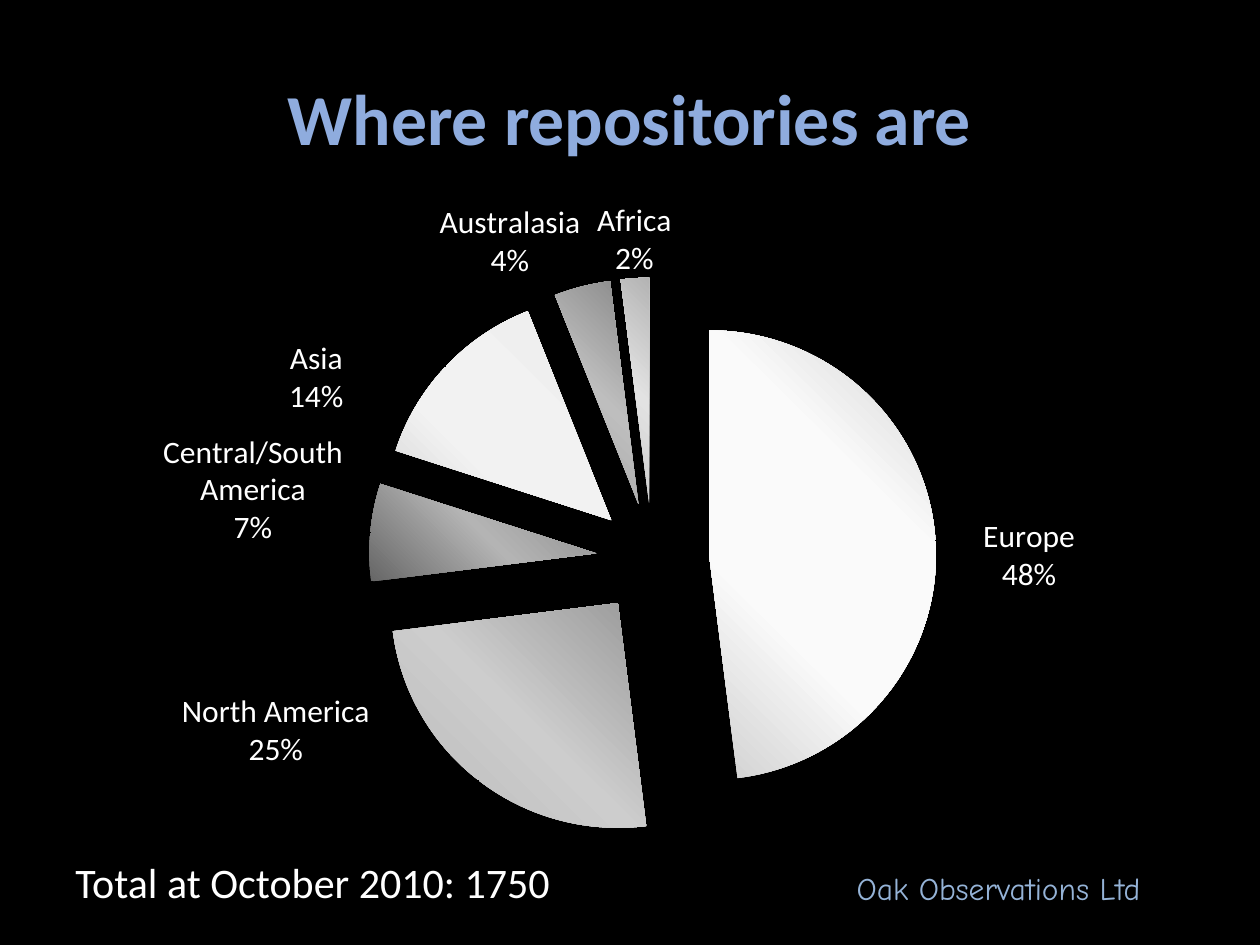
import copy
import pptx
import pptx.util
import pptx.dml.color
import pptx.chart.data
import pptx.enum.chart
import pptx.enum.text
import pptx.oxml
import pptx.oxml.ns
from pptx.util import Inches

CHART_NS = 'xmlns:c="http://schemas.openxmlformats.org/drawingml/2006/chart"'
SHARES = {
    "Europe": (48, ["CFCFCF", "FAFAFA", "FAFAFA", "CFCFCF"]),
    "North America": (25, ["B8B8B8", "CDCDCD", "999999"]),
    "Central/South America": (7, ["666666", "B4B4B4", "8A8A8A"]),
    "Asia": (14, ["D4D4D4", "F2F2F2", "EFEFEF", "EDEDED"]),
    "Australasia": (4, ["A0A0A0", "BEBEBE", "868686"]),
    "Africa": (2, ["CACACA", "E2E2E2", "B4B4B4"]),
}
LABEL_SHIFTS = {
    "Europe": (0.32, 0.12),
    "North America": (-0.83, -0.75),
    "Central/South America": (-0.16, 0.12),
    "Asia": (-0.77, 0.43),
}
PLOT_BOX = {"x": 0.27, "y": 0.11, "w": 0.5, "h": 0.85}


def colour(value):
    return pptx.dml.color.RGBColor.from_string(value)


def set_font(font, size, hex_colour, name="Calibri", bold=False):
    formats = {"size": pptx.util.Pt(size), "name": name, "bold": bold}
    for key, value in formats.items():
        setattr(font, key, value)
    font.color.rgb = colour(hex_colour)


def add_text(page, bounds, text, size, hex_colour, name="Calibri", bold=False,
             align=pptx.enum.text.PP_ALIGN.LEFT,
             anchor=pptx.enum.text.MSO_ANCHOR.TOP):
    frame = page.shapes.add_textbox(*map(Inches, bounds)).text_frame
    for key, value in {"word_wrap": True, "vertical_anchor": anchor}.items():
        setattr(frame, key, value)
    para = frame.paragraphs[0]
    para.alignment = align
    span = para.add_run()
    span.text = text
    set_font(span.font, size, hex_colour, name, bold)


def shade_slice(chart, point, hex_colours):
    fill = point.format.fill
    fill.gradient()
    fill.gradient_angle = 45
    stop_list = list(chart.element.iter(pptx.oxml.ns.qn("a:gsLst")))[-1]
    for _ in hex_colours[2:]:
        stop_list.insert(1, copy.deepcopy(stop_list[0]))
    for index, (stop, value) in enumerate(zip(fill.gradient_stops, hex_colours)):
        stop.color.rgb = colour(value)
        stop.position = index / (len(hex_colours) - 1)
    point.format.line.fill.background()


def place_plot(chart):
    area = chart.element.find(".//" + pptx.oxml.ns.qn("c:plotArea"))
    for layout in area.findall(pptx.oxml.ns.qn("c:layout")):
        area.remove(layout)
    modes = "".join(f'<c:{key}Mode val="edge"/>' for key in "xy")
    sizes = "".join(f'<c:{key} val="{value}"/>' for key, value in PLOT_BOX.items())
    area.insert(0, pptx.oxml.parse_xml(
        f'<c:layout {CHART_NS}><c:manualLayout><c:layoutTarget val="inner"/>'
        f'{modes}{sizes}</c:manualLayout></c:layout>'))


def explode_slices(chart, percent):
    series_name = chart.element.find(
        ".//" + pptx.oxml.ns.qn("c:ser") + "/" + pptx.oxml.ns.qn("c:tx"))
    series_name.addnext(pptx.oxml.parse_xml(
        f'<c:explosion {CHART_NS} val="{percent}"/>'))


def shift_labels(label_list, width, height):
    shared = [part for part in label_list
              if part.tag != pptx.oxml.ns.qn("c:showLeaderLines")]
    names = list(SHARES)
    for position, (name, (right, down)) in enumerate(LABEL_SHIFTS.items()):
        label = pptx.oxml.parse_xml(
            f'<c:dLbl {CHART_NS}><c:idx val="{names.index(name)}"/>'
            f'<c:layout><c:manualLayout><c:x val="{right / width}"/>'
            f'<c:y val="{down / height}"/></c:manualLayout></c:layout></c:dLbl>')
        label.extend(copy.deepcopy(shared))
        label_list.insert(position, label)


def add_labels(chart, width, height):
    labels = chart.plots[0].series[0].data_labels
    formats = {
        "show_category_name": True,
        "show_percentage": True,
        "show_value": False,
        "number_format": "0%",
        "number_format_is_linked": False,
        "position": pptx.enum.chart.XL_LABEL_POSITION.OUTSIDE_END,
    }
    for key, value in formats.items():
        setattr(labels, key, value)
    set_font(labels.font, 18, "FFFFFF")
    label_list = chart.element.find(".//" + pptx.oxml.ns.qn("c:dLbls"))
    last_flag = label_list.find(pptx.oxml.ns.qn("c:showBubbleSize"))
    if last_flag is None:
        last_flag = label_list.find(pptx.oxml.ns.qn("c:showPercent"))
    last_flag.addnext(pptx.oxml.parse_xml(
        f'<c:separator {CHART_NS}>\n</c:separator>'))
    shift_labels(label_list, width, height)


def add_share_chart(page, bounds):
    data = pptx.chart.data.CategoryChartData()
    data.categories = list(SHARES)
    data.add_series("Series 1", [value for value, _ in SHARES.values()])
    chart = page.shapes.add_chart(
        pptx.enum.chart.XL_CHART_TYPE.PIE, *map(Inches, bounds), data).chart
    for key in ("has_title", "has_legend"):
        setattr(chart, key, False)
    set_font(chart.font, 18, "FFFFFF")
    plot = chart.plots[0]
    plot.vary_by_categories = True
    explode_slices(chart, 25)
    for index, (_, shades) in enumerate(SHARES.values()):
        shade_slice(chart, plot.series[0].points[index], shades)
    add_labels(chart, *bounds[2:])
    place_plot(chart)


def build_page(deck):
    page = deck.slides.add_slide(deck.slide_layouts[6])
    page.background.fill.solid()
    page.background.fill.fore_color.rgb = colour("000000")
    add_text(page, (0.5, 0.3, 9, 1.25), "Where repositories are", 41, "8FACDE",
             bold=True, align=pptx.enum.text.PP_ALIGN.CENTER,
             anchor=pptx.enum.text.MSO_ANCHOR.MIDDLE)
    add_share_chart(page, (0.5, 1.55, 9, 5.35))
    add_text(page, (6.7, 6.85, 3.07, 0.4), "Oak Observations Ltd", 18, "95B3D7",
             name="Comic Neue")
    add_text(page, (0.5, 6.75, 5.08, 0.5), "Total at October 2010: 1750", 24, "FFFFFF")


def main():
    deck = pptx.Presentation()
    deck.slide_width, deck.slide_height = Inches(10), Inches(7.5)
    build_page(deck)
    deck.save("out.pptx")


if __name__ == "__main__":
    main()
